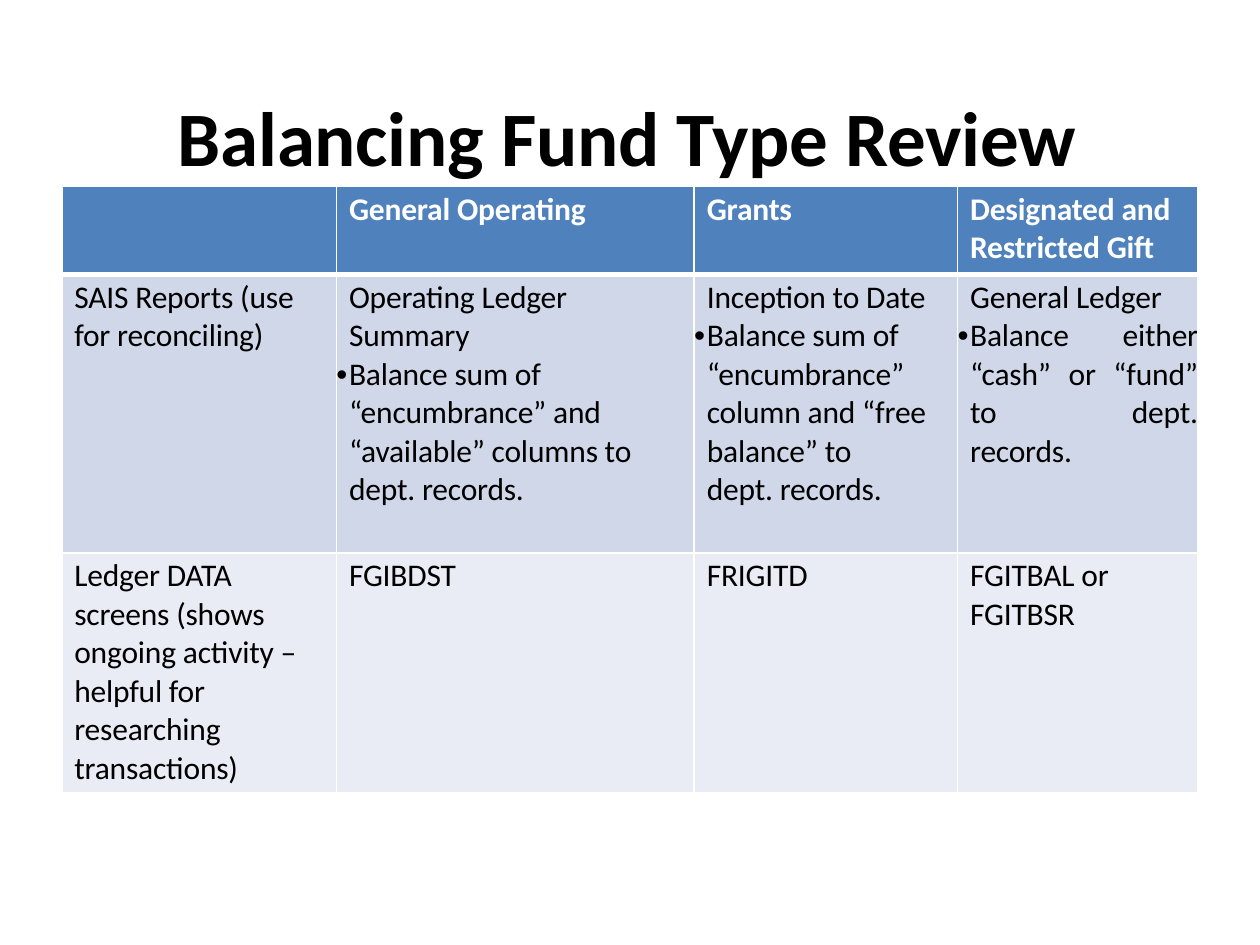
from lxml import etree
from pptx import Presentation
from pptx.dml.color import RGBColor
from pptx.enum.text import MSO_ANCHOR, PP_ALIGN
from pptx.oxml.ns import qn
from pptx.util import Inches, Pt

LEFT, JUSTIFY = PP_ALIGN.LEFT, PP_ALIGN.JUSTIFY
TOP = MSO_ANCHOR.TOP
FONT = "Calibri"
BLACK, WHITE = "000000", "FFFFFF"
ROW_FILLS = ["4F81BC", "D0D7E8", "E9ECF4"]
COL_WIDTHS = [2.18, 2.84, 2.09, 1.91]
ROW_HEIGHTS = [0.7, 2.21, 1.9]

# Each cell holds its paragraphs; those after the first are bulleted.
ROWS = [
    [[], ["General Operating"], ["Grants"], ["Designated and\nRestricted Gift"]],
    [
        ["SAIS Reports (use\nfor reconciling)"],
        ["Operating Ledger\nSummary",
         "Balance sum of\n“encumbrance” and\n“available” columns to\ndept. records."],
        ["Inception to Date",
         "Balance sum of\n“encumbrance”\ncolumn and “free\nbalance” to\ndept. records."],
        ["General Ledger",
         "Balance either\n“cash” or “fund”\nto dept.\nrecords."],
    ],
    [
        ["Ledger DATA\nscreens (shows\nongoing activity –\nhelpful for\nresearching\ntransactions)"],
        ["FGIBDST"],
        ["FRIGITD"],
        ["FGITBAL or\nFGITBSR"],
    ],
]


def rgb(color):
    return RGBColor.from_string(color)


def set_bullet(p):
    pPr = p._p.get_or_add_pPr()
    pPr.set("indent", str(-Inches(0.1)))
    etree.SubElement(pPr, qn("a:buFont"), typeface="Arial")
    etree.SubElement(pPr, qn("a:buChar"), char="•")


def write(p, text, size=18, color=BLACK, bold=False, align=LEFT,
          before=0, indent=0.1, spacing=-10, bullet=False):
    """Fill a paragraph; spacing is in hundredths of a point."""
    p.text = text
    p.alignment = align
    p.space_before = Pt(before)
    p._p.get_or_add_pPr().set("marL", str(Inches(indent)))
    if bullet:
        set_bullet(p)
    for r in p.runs:
        r.font.name = FONT
        r.font.size = Pt(size)
        r.font.bold = bold
        r.font.color.rgb = rgb(color)
        r._r.get_or_add_rPr().set("spc", str(spacing))


def set_borders(cell, top=1, bottom=1):
    tcPr = cell._tc.get_or_add_tcPr()
    for side, width in (("L", 1), ("R", 1), ("T", top), ("B", bottom)):
        ln = etree.SubElement(tcPr, qn(f"a:ln{side}"), w=str(Pt(width)))
        fill = etree.SubElement(ln, qn("a:solidFill"))
        etree.SubElement(fill, qn("a:srgbClr"), val=WHITE)


def fill_cell(cell, paragraphs, row):
    set_borders(cell, top=3 if row == 1 else 1, bottom=3 if row == 0 else 1)
    cell.fill.solid()
    cell.fill.fore_color.rgb = rgb(ROW_FILLS[row])
    cell.margin_left = cell.margin_right = cell.margin_bottom = 0
    cell.margin_top = Inches(0.03)
    cell.vertical_anchor = TOP
    header = row == 0
    tf = cell.text_frame
    for i, text in enumerate(paragraphs):
        p = tf.paragraphs[0] if i == 0 else tf.add_paragraph()
        justified = i > 0 and text.startswith("Balance either")
        write(p, text, color=WHITE if header else BLACK, bold=header,
              align=JUSTIFY if justified else LEFT,
              before=2.4 if i == 0 else 0, bullet=i > 0)


def add_title(s, text):
    title = s.shapes.title
    title.left, title.top = Inches(1.4), Inches(0.7)
    title.width, title.height = Inches(7.21), Inches(0.76)
    tf = title.text_frame
    tf.margin_left = tf.margin_right = tf.margin_bottom = 0
    tf.margin_top = Inches(0.01)
    tf.vertical_anchor = TOP
    tf.word_wrap = True
    write(tf.paragraphs[0], text, size=44, bold=True, before=1.1,
          indent=0.01, spacing=-15)


def add_fund_table(s):
    table = s.shapes.add_table(
        len(ROWS), len(COL_WIDTHS), Inches(0.49), Inches(1.48),
        Inches(sum(COL_WIDTHS)), Inches(sum(ROW_HEIGHTS))).table
    for column, width in zip(table.columns, COL_WIDTHS):
        column.width = Inches(width)
    for i, (height, cells) in enumerate(zip(ROW_HEIGHTS, ROWS)):
        table.rows[i].height = Inches(height)
        for j, paragraphs in enumerate(cells):
            fill_cell(table.cell(i, j), paragraphs, i)


def main():
    prs = Presentation()
    prs.slide_width, prs.slide_height = Inches(10), Inches(7.5)
    s = prs.slides.add_slide(prs.slide_layouts[5])
    add_title(s, "Balancing Fund Type Review")
    add_fund_table(s)
    prs.save("out.pptx")


if __name__ == "__main__":
    main()
